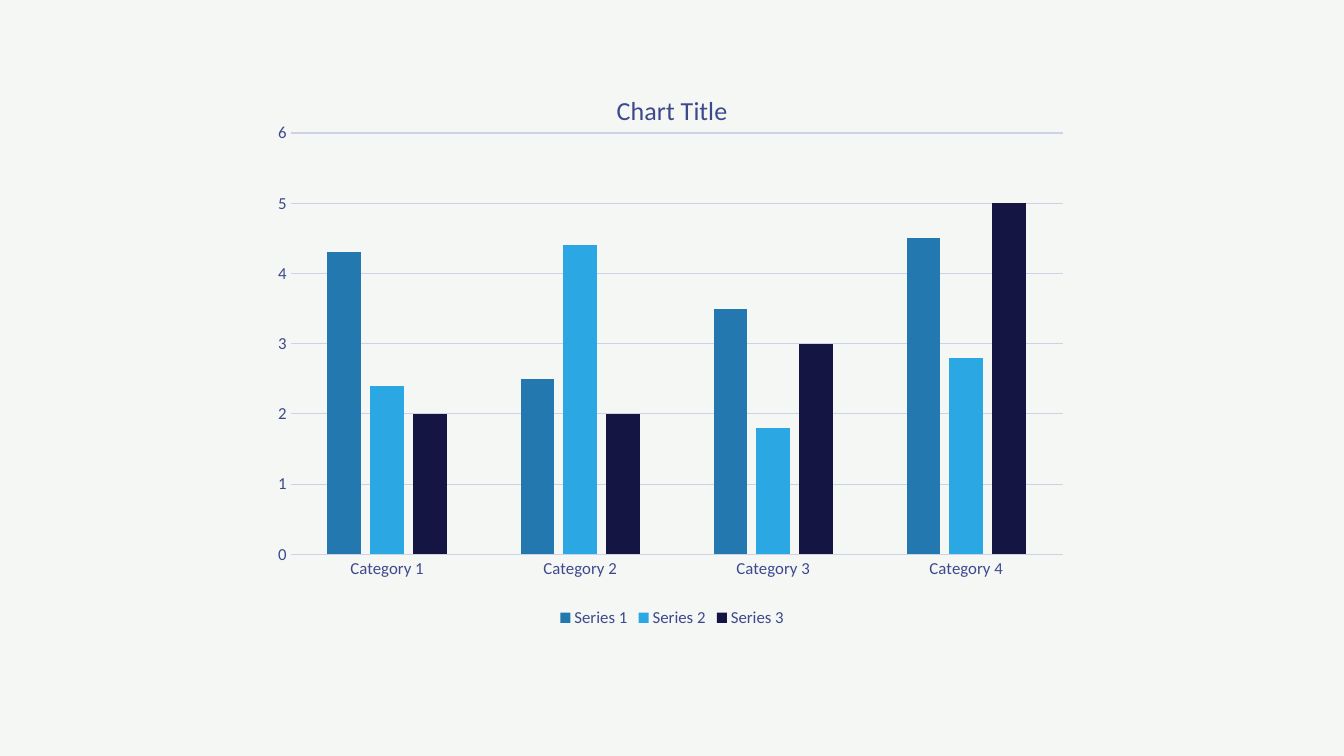
from lxml import etree
from pptx import Presentation
from pptx.chart.data import CategoryChartData
from pptx.dml.color import RGBColor
from pptx.enum.chart import XL_CHART_TYPE, XL_LEGEND_POSITION, XL_TICK_MARK
from pptx.oxml.ns import qn
from pptx.util import Cm, Pt

COLUMNS = XL_CHART_TYPE.COLUMN_CLUSTERED
BOTTOM = XL_LEGEND_POSITION.BOTTOM
NO_TICKS = XL_TICK_MARK.NONE

# Content
TITLE = "Chart Title"
CATEGORIES = ["Category 1", "Category 2", "Category 3", "Category 4"]
PAPER = RGBColor(0xF5, 0xF7, 0xF5)
INK = RGBColor(0x0B, 0x0D, 0x19)
LABEL = RGBColor(0x3E, 0x49, 0x8C)
GRID = RGBColor(0xCE, 0xD2, 0xE9)
SERIES = [
    ("Series 1", (4.3, 2.5, 3.5, 4.5), RGBColor(0x23, 0x79, 0xAF)),
    ("Series 2", (2.4, 4.4, 1.8, 2.8), RGBColor(0x2B, 0xA8, 0xE4)),
    ("Series 3", (2, 2, 3, 5), RGBColor(0x14, 0x15, 0x43)),
]
# Plot area as shares of the chart
PLOT = {"x": 0.035, "y": 0.11, "w": 0.941, "h": 0.752}


def style_font(font, size, color):
    font.name = "Calibri"
    font.size = Pt(size)
    font.bold = False
    font.color.rgb = color


def style_line(line):
    line.color.rgb = GRID
    line.width = Pt(0.75)


def place_plot(plot_area):
    layout = plot_area.find(qn("c:layout"))
    if layout is None:
        layout = etree.Element(qn("c:layout"))
        plot_area.insert(0, layout)
    manual = etree.SubElement(layout, qn("c:manualLayout"))
    settings = {"layoutTarget": "inner", "xMode": "edge", "yMode": "edge", **PLOT}
    for name, value in settings.items():
        etree.SubElement(manual, qn("c:" + name)).set("val", str(value))


# Slide
deck = Presentation()
deck.slide_width, deck.slide_height = Cm(33.87), Cm(19.05)
slide = deck.slides.add_slide(deck.slide_layouts[6])
slide.background.fill.solid()
slide.background.fill.fore_color.rgb = PAPER

# Chart
data = CategoryChartData()
data.categories = CATEGORIES
for name, values, color in SERIES:
    data.add_series(name, values)
frame = slide.shapes.add_chart(COLUMNS, Cm(6.6), Cm(1.8), Cm(20.68), Cm(14.12), data)
chart = frame.chart
style_font(chart.font, 10, INK)
place_plot(chart.element.chart.plotArea)

# Title and legend
chart.has_title = True
heading = chart.chart_title.text_frame
heading.text = TITLE
style_font(heading.paragraphs[0].runs[0].font, 18.6, LABEL)
chart.chart_title.include_in_layout = False
chart.has_legend = True
chart.legend.position = BOTTOM
chart.legend.include_in_layout = False
style_font(chart.legend.font, 12, LABEL)

# Columns
plot = chart.plots[0]
plot.gap_width, plot.overlap = 219, -27
plot.vary_by_categories = False
for series, (name, values, color) in zip(plot.series, SERIES):
    series.format.fill.solid()
    series.format.fill.fore_color.rgb = color

# Axes
for axis in (chart.category_axis, chart.value_axis):
    axis.major_tick_mark = axis.minor_tick_mark = NO_TICKS
    style_font(axis.tick_labels.font, 12, LABEL)
style_line(chart.category_axis.format.line)
scale = chart.value_axis
scale.minimum_scale, scale.maximum_scale, scale.major_unit = 0, 6, 1
scale.has_major_gridlines = True
style_line(scale.major_gridlines.format.line)
scale.format.line.fill.background()

deck.save("out.pptx")
